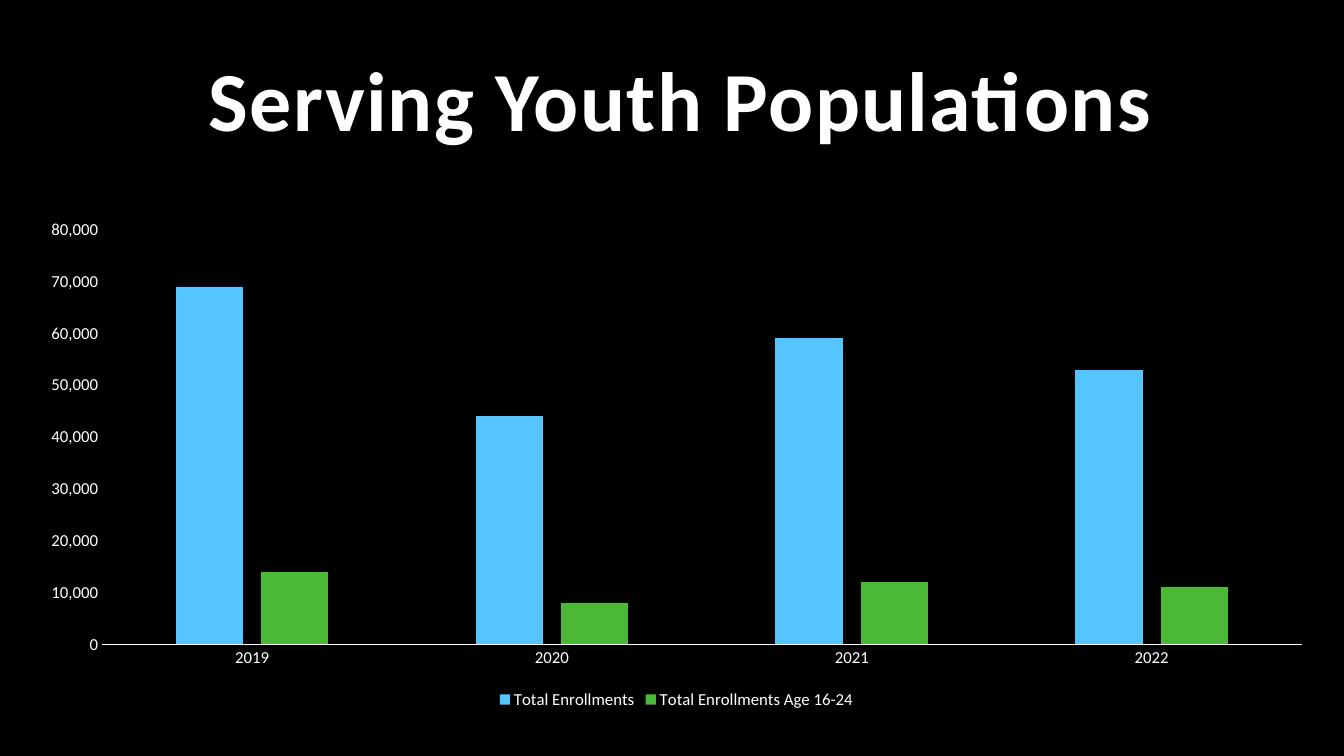
import dataclasses

import pptx
import pptx.chart.data
import pptx.dml.color
import pptx.enum.chart
import pptx.enum.text
import pptx.util

Cm = pptx.util.Cm
Pt = pptx.util.Pt
RGB = pptx.dml.color.RGBColor.from_string


@dataclasses.dataclass(frozen=True)
class Theme:
    """Hold the colours, font and type sizes."""
    back: str = "000000"
    ink: str = "FFFFFF"
    bars: tuple = ("56C5FF", "4BB836")
    face: str = "Calibri"
    head: int = 60
    label: int = 12


THEME = Theme()
YEARS = ("2019", "2020", "2021", "2022")
COUNTS = {
    "Total Enrollments": (69000, 44000, 59000, 53000),
    "Total Enrollments Age 16-24": (14000, 8000, 12000, 11000),
}


def style(font, size):
    """Set the theme face and ink on a font."""
    font.name = THEME.face
    font.size = Pt(size)
    font.color.rgb = RGB(THEME.ink)


def add_title(slide, box, text):
    """Place the centred heading at the foot of its box."""
    frame = slide.shapes.add_textbox(*box).text_frame
    frame.word_wrap = True
    frame.vertical_anchor = pptx.enum.text.MSO_ANCHOR.BOTTOM
    frame.text = text
    line = frame.paragraphs[0]
    line.alignment = pptx.enum.text.PP_ALIGN.CENTER
    line.line_spacing = 0.9
    run = line.runs[0]
    style(run.font, THEME.head)
    run.font.bold = True
    run._r.get_or_add_rPr().set("spc", "100")


def style_axis(axis):
    """Clear the grid and ticks and style the labels of an axis."""
    axis.has_major_gridlines = False
    axis.major_tick_mark = pptx.enum.chart.XL_TICK_MARK.NONE
    axis.minor_tick_mark = pptx.enum.chart.XL_TICK_MARK.NONE
    style(axis.tick_labels.font, THEME.label)


def add_bars(slide, box):
    """Fill the box with the clustered enrollment columns."""
    data = pptx.chart.data.CategoryChartData(number_format="#,##0")
    data.categories = YEARS
    for name, counts in COUNTS.items():
        data.add_series(name, counts)
    kind = pptx.enum.chart.XL_CHART_TYPE.COLUMN_CLUSTERED
    chart = slide.shapes.add_chart(kind, *box, data).chart
    style(chart.font, THEME.label)
    chart.has_title = False

    chart.has_legend = True
    chart.legend.position = pptx.enum.chart.XL_LEGEND_POSITION.BOTTOM
    chart.legend.include_in_layout = False
    style(chart.legend.font, THEME.label)

    years, scale = chart.category_axis, chart.value_axis
    for axis in (years, scale):
        style_axis(axis)
    years.format.line.color.rgb = RGB(THEME.ink)
    years.format.line.width = Pt(0.75)
    scale.format.line.fill.background()
    scale.minimum_scale, scale.maximum_scale = 0, 80000
    scale.major_unit = 10000
    scale.tick_labels.number_format = "#,##0"
    scale.tick_labels.number_format_is_linked = False

    plot = chart.plots[0]
    plot.vary_by_categories = False
    plot.gap_width, plot.overlap = 219, -27
    for bar, tint in zip(plot.series, THEME.bars):
        bar.format.fill.solid()
        bar.format.fill.fore_color.rgb = RGB(tint)


def main():
    """Build and save the slide."""
    deck = pptx.Presentation()
    deck.slide_width, deck.slide_height = Cm(33.87), Cm(19.05)
    slide = deck.slides.add_slide(deck.slide_layouts[6])
    slide.background.fill.solid()
    slide.background.fill.fore_color.rgb = RGB(THEME.back)
    left = Cm(0.64)
    add_title(slide, (left, Cm(0.08), Cm(33.02), Cm(3.81)),
              "Serving Youth Populations")
    add_bars(slide, (left, Cm(5.28), Cm(32.82), Cm(12.7)))
    deck.save("out.pptx")


if __name__ == "__main__":
    main()
